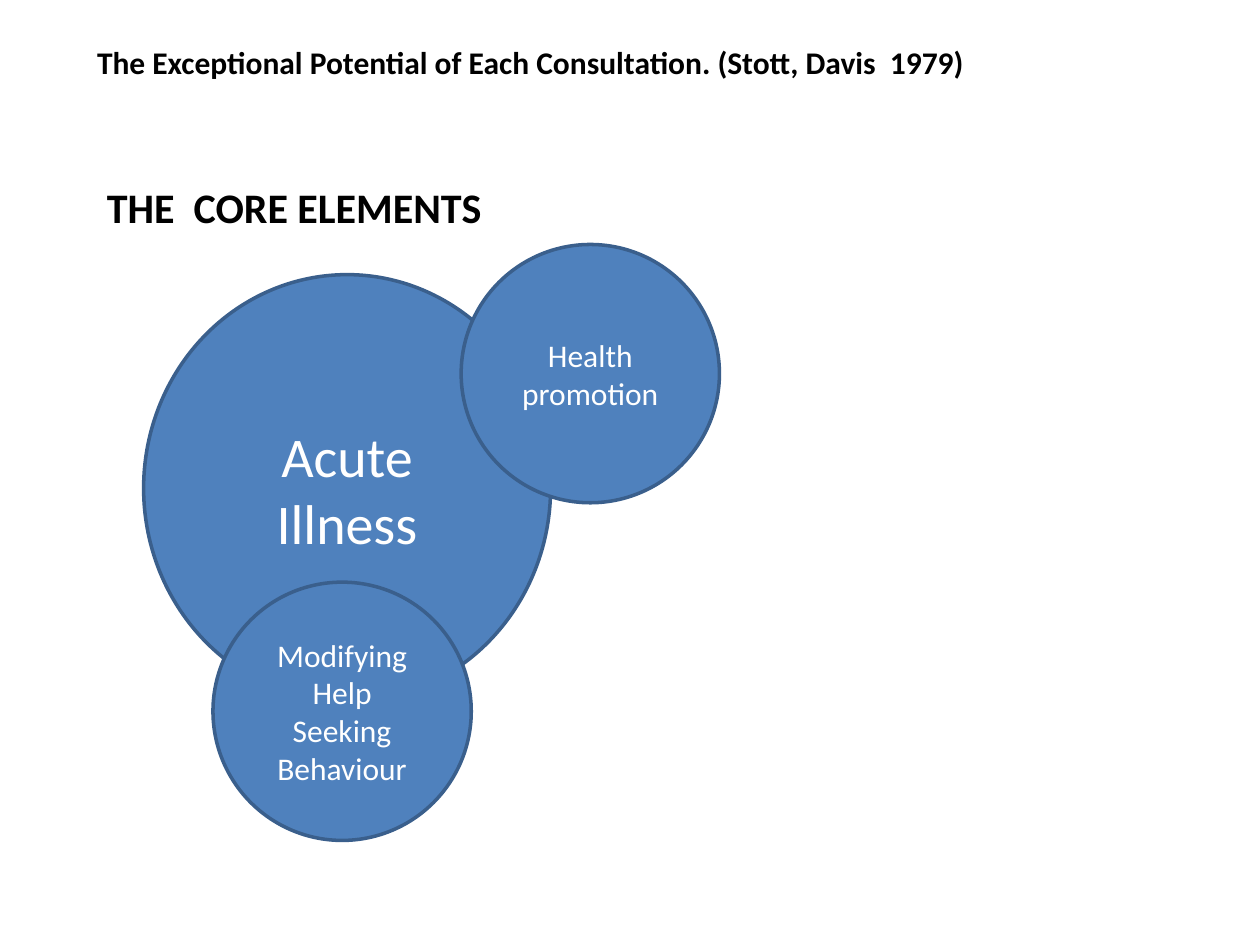
from pptx import Presentation
from pptx import util as u
from pptx.dml.color import RGBColor
from pptx.enum import shapes, text

COLORS = {"text": "000000", "light": "FFFFFF", "fill": "4F81BD", "line": "3A5F8C"}
SMALL = 2.05  # diameter of the two smaller circles


class Deck:
    font = "Calibri"

    def __init__(self, prs):
        self.s = prs.slides.add_slide(prs.slide_layouts[5])  # Title Only

    def set_text(self, sp, words, size, color, align, anchor, bold=False):
        tf = sp.text_frame
        tf.word_wrap = True
        tf.auto_size = text.MSO_AUTO_SIZE.NONE
        tf.vertical_anchor = anchor
        p = tf.paragraphs[0]
        p.text = words
        p.alignment = align
        p.font.name = self.font
        p.font.size = u.Pt(size)
        p.font.bold = bold
        p.font.color.rgb = RGBColor.from_string(COLORS[color])

    def set_heading(self, sp, words, size):
        self.set_text(sp, words, size, "text", text.PP_ALIGN.LEFT,
                      text.MSO_ANCHOR.TOP, bold=True)

    def title(self, words, x, y, w, h, size):
        sp = self.s.shapes.title
        sp.left, sp.top, sp.width, sp.height = map(u.Inches, (x, y, w, h))
        self.set_heading(sp, words, size)

    def heading(self, words, x, y, w, h, size):
        sp = self.s.shapes.add_textbox(*map(u.Inches, (x, y, w, h)))
        self.set_heading(sp, words, size)

    def circle(self, words, x, y, w, h, size):
        sp = self.s.shapes.add_shape(shapes.MSO_SHAPE.OVAL,
                                     *map(u.Inches, (x, y, w, h)))
        sp.shadow.inherit = False
        sp.fill.solid()
        sp.fill.fore_color.rgb = RGBColor.from_string(COLORS["fill"])
        sp.line.color.rgb = RGBColor.from_string(COLORS["line"])
        sp.line.width = u.Pt(2)
        self.set_text(sp, words, size, "light", text.PP_ALIGN.CENTER,
                      text.MSO_ANCHOR.MIDDLE)


def main():
    prs = Presentation()
    prs.slide_width, prs.slide_height = u.Inches(10), u.Inches(7.5)
    deck = Deck(prs)

    # Title
    deck.title("The Exceptional Potential of Each Consultation. (Stott, Davis  1979)",
               0.67, 0.29, 9.13, 1.62, 18)

    # Overlapping circles, largest at the back
    deck.circle("Acute Illness", 1.14, 2.18, 3.23, 3.39, 32)
    deck.circle("Health promotion", 3.66, 1.94, SMALL, SMALL, 18)
    deck.circle("Modifying Help Seeking Behaviour", 1.69, 4.62, SMALL, SMALL, 18)

    # Heading over the circles
    deck.heading("THE  CORE ELEMENTS", 0.75, 1.39, 6.06, 0.5, 24)

    prs.save("out.pptx")


if __name__ == "__main__":
    main()
